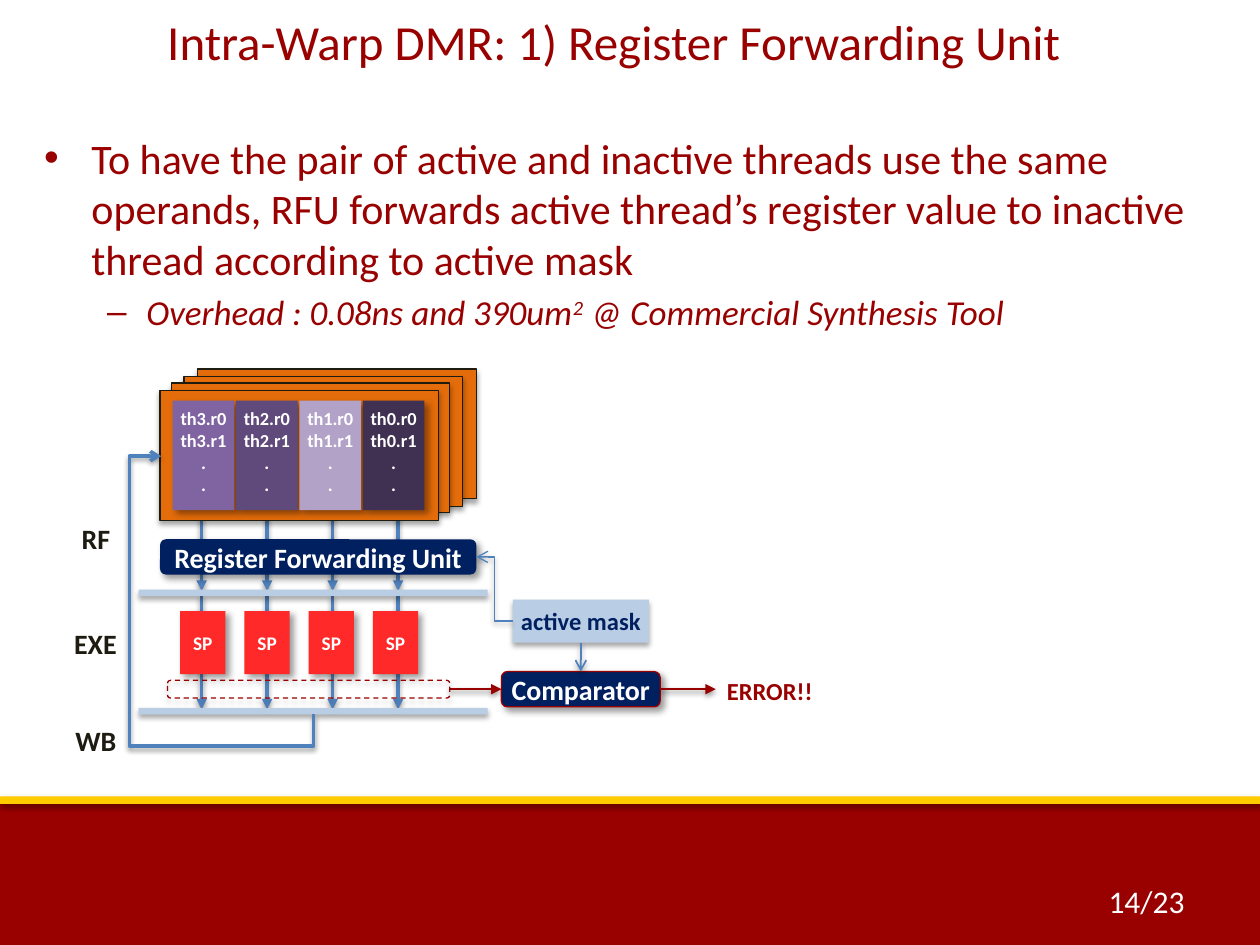
import pptx
import pptx.util
import pptx.dml.color
import pptx.enum.dml
import pptx.enum.shapes
import pptx.enum.text
import pptx.oxml
import pptx.oxml.ns

Inches = pptx.util.Inches
Pt = pptx.util.Pt
qn = pptx.oxml.ns.qn
SHAPE = pptx.enum.shapes.MSO_SHAPE
CONNECTOR = pptx.enum.shapes.MSO_CONNECTOR
ALIGN = pptx.enum.text.PP_ALIGN
ANCHOR = pptx.enum.text.MSO_ANCHOR
TOP, LEFT, BOTTOM, RIGHT = range(4)

COLORS = {
    "crimson": "990000", "gold": "FFCC00", "orange": "E46C0A", "ink": "1E1C11",
    "blue": "4F81BD", "pale": "B9CDE5", "navy": "002060", "red": "FF2929",
    "white": "FFFFFF", "th3": "8064A2", "th2": "604A7B", "th1": "B3A2C7",
    "th0": "403152",
}
# opacity %, blur pt, distance pt, direction in degrees
SHADOWS = {"soft": (35, 3.1, 1.8, 90), "line": (38, 3.1, 1.6, 90), "deep": (40, 4, 3, 45)}


def rgb(name):
    return pptx.dml.color.RGBColor.from_string(COLORS[name])


def add_shadow(shape, kind):
    opacity, blur, distance, direction = SHADOWS[kind]
    properties = shape._element.spPr
    for old in properties.findall(qn("a:effectLst")):
        properties.remove(old)
    properties.append(pptx.oxml.parse_xml(
        f'<a:effectLst {pptx.oxml.ns.nsdecls("a")}>'
        f'<a:outerShdw blurRad="{Pt(blur)}" dist="{Pt(distance)}" '
        f'dir="{direction * 60000}" rotWithShape="0"><a:srgbClr val="000000">'
        f'<a:alpha val="{opacity * 1000}"/></a:srgbClr></a:outerShdw></a:effectLst>'))


def format_font(font, color, **values):
    font.color.rgb = rgb(color)
    for name, value in {"name": "Calibri", **values}.items():
        setattr(font, name, value)


def place(shape, left, top, width, height):
    box = {"left": left, "top": top, "width": width, "height": height}
    for name, value in box.items():
        setattr(shape, name, Inches(value))


def add_box(slide, bounds, fill, shadow="soft", preset=SHAPE.RECTANGLE,
            outline=None, dashed=False):
    box = slide.shapes.add_shape(preset, *map(Inches, bounds))
    if fill:
        box.fill.solid()
        box.fill.fore_color.rgb = rgb(fill)
    else:
        box.fill.background()
    if outline:
        box.line.color.rgb = rgb(outline)
        box.line.width = Pt(0.75)
        if dashed:
            box.line.dash_style = pptx.enum.dml.MSO_LINE.DASH
    else:
        box.line.fill.background()
    box.shadow.inherit = False
    add_shadow(box, shadow)
    return box


def write(shape, lines, size, color="white", anchor=ANCHOR.MIDDLE,
          align=ALIGN.CENTER, margin=0, bold=True, wrap=True):
    frame = shape.text_frame
    frame.text = "\n".join(lines)
    values = {"vertical_anchor": anchor, "word_wrap": wrap,
              "margin_left": Inches(margin), "margin_right": Inches(margin)}
    for name, value in values.items():
        setattr(frame, name, value)
    for paragraph in frame.paragraphs:
        paragraph.alignment = align
        format_font(paragraph.font, color, size=Pt(size), bold=bold)


def add_label(slide, bounds, text, size, color, **layout):
    label = slide.shapes.add_textbox(*map(Inches, bounds))
    write(label, [text], size, color, margin=0.1, **layout)


def add_arrow(slide, start, end, color="blue", width=2, head="triangle",
              kind=CONNECTOR.STRAIGHT):
    """Each end is an (x, y) point or a (shape, side) pair to join."""
    points = [(0, 0) if hasattr(e[0], "shape_id") else e for e in (start, end)]
    arrow = slide.shapes.add_connector(
        kind, *(Inches(value) for point in points for value in point))
    for spot, join in ((start, arrow.begin_connect), (end, arrow.end_connect)):
        if hasattr(spot[0], "shape_id"):
            join(*spot)
    arrow.line.color.rgb = rgb(color)
    arrow.line.width = Pt(width)
    arrow.line._get_or_add_ln().append(pptx.oxml.parse_xml(
        f'<a:tailEnd {pptx.oxml.ns.nsdecls("a")} type="{head}"/>'))
    add_shadow(arrow, "line")
    return arrow


def add_write_back(slide, bar, registers):
    """Route from below the WB bar round the left side into the registers."""
    loop = add_arrow(slide, (bar, BOTTOM), (registers, LEFT), head="arrow",
                     kind=CONNECTOR.ELBOW)
    place(loop, 0.86, 4.04, 2.05, 1.21)
    frame = loop._element.spPr.find(qn("a:xfrm"))
    frame.attrib.pop("flipV", None)
    frame.set("rot", str(90 * 60000))
    frame.set("flipH", "1")
    geometry = loop._element.spPr.find(qn("a:prstGeom"))
    geometry.set("prst", "bentConnector4")
    guides = geometry.find(qn("a:avLst"))
    for name, value in (("adj1", -12200), ("adj2", 120900)):
        guides.append(pptx.oxml.parse_xml(
            f'<a:gd {pptx.oxml.ns.nsdecls("a")} name="{name}" fmla="val {value}"/>'))


def add_text(slide):
    title, body = slide.placeholders
    place(title, 0.17, 0.04, 8.9, 0.83)
    write(title, ["Intra-Warp DMR: 1) Register Forwarding Unit"], 28, "crimson",
          anchor=ANCHOR.TOP, margin=0.1, bold=False)
    title.text_frame.margin_left = Inches(0.6)

    place(body, 0.25, 1, 9.33, 5.92)
    claim = body.text_frame.paragraphs[0]
    claim.text = ("To have the pair of active and inactive threads use the same operands, "
                  "RFU forwards active thread’s register value to inactive thread "
                  "according to active mask")
    format_font(claim.font, "crimson", size=Pt(24))
    overhead = body.text_frame.add_paragraph()
    overhead.level = 1
    format_font(overhead.font, "crimson", size=Pt(20), italic=True)
    for text in ("Overhead : 0.08ns and 390um", "2", " @ Commercial Synthesis Tool"):
        run = overhead.add_run()
        run.text = text
        if text == "2":
            run._r.get_or_add_rPr().set("baseline", "30000")


def add_pipeline(slide):
    lanes = [1.6 + 0.52 * lane for lane in range(4)]
    for x in lanes:
        for top in (3.79, 4.73):
            add_arrow(slide, (x, top), (x, top + 0.9))

    for left, top in ((1.57, 2.93), (1.46, 2.99), (1.36, 3.04), (1.27, 3.1)):
        registers = add_box(slide, (left, top, 2.21, 1.03), "orange", outline="ink")
    for lane, x in enumerate(lanes):
        thread = f"th{3 - lane}"
        bank = add_box(slide, (1.37 + 0.5 * lane + 0.003 * lane, 3.18, 0.49, 0.87),
                       thread, "deep")
        write(bank, [thread + ".r0", thread + ".r1", ".", "."], 10.5, anchor=ANCHOR.TOP)
        processor = add_box(slide, (1.43 + 0.51 * lane, 4.85, 0.36, 0.5), "red", "deep")
        write(processor, ["SP"], 11)

    for top in (4.68, 5.62):
        bar = add_box(slide, (1.1, top, 2.77, 0.05), "pale")
    for left, top, stage in ((0.55, 4.09, "RF"), (0.49, 4.92, "EXE"), (0.5, 5.69, "WB")):
        add_label(slide, (left, top, 0.54, 0.37), stage, 16, "ink",
                  anchor=ANCHOR.TOP, align=ALIGN.LEFT, wrap=False)
    add_write_back(slide, bar, registers)


def add_checker(slide):
    outputs = add_box(slide, (1.33, 5.4, 2.24, 0.14), None,
                      preset=SHAPE.ROUNDED_RECTANGLE, outline="crimson", dashed=True)
    comparator = add_box(slide, (3.98, 5.33, 1.26, 0.28), "navy", "deep",
                         SHAPE.ROUNDED_RECTANGLE, "crimson")
    write(comparator, ["Comparator"], 16)
    mask = add_box(slide, (4.07, 4.76, 1.08, 0.34), "pale")
    write(mask, ["active mask"], 14, "navy")
    forwarding = add_box(slide, (1.27, 4.28, 2.51, 0.28), "navy", "deep",
                         SHAPE.ROUNDED_RECTANGLE)
    write(forwarding, ["Register Forwarding Unit"], 16)

    add_arrow(slide, (outputs, RIGHT), (comparator, LEFT), "crimson", 1.5)
    add_arrow(slide, (comparator, RIGHT), (5.68, 5.47), "crimson", 1.5)
    add_arrow(slide, (mask, LEFT), (forwarding, RIGHT), width=0.75, head="arrow",
              kind=CONNECTOR.ELBOW)
    add_arrow(slide, (mask, BOTTOM), (comparator, TOP), width=1, head="arrow")
    add_label(slide, (5.67, 5.32, 0.89, 0.34), "ERROR!!", 14, "crimson",
              anchor=ANCHOR.TOP, align=ALIGN.LEFT, wrap=False)


def main():
    deck = pptx.Presentation()
    deck.slide_width, deck.slide_height = Inches(10), Inches(7.5)
    slide = deck.slides.add_slide(deck.slide_layouts[1])
    add_box(slide, (0, 6.35, 10, 1.15), "crimson")
    add_box(slide, (0, 6.32, 10, 0.06), "gold", "line")
    add_text(slide)
    add_pipeline(slide)
    add_checker(slide)
    add_label(slide, (7.17, 6.95, 2.33, 0.4), "14/23", 18, "white",
              align=ALIGN.RIGHT, bold=False)
    deck.save("out.pptx")


if __name__ == "__main__":
    main()
